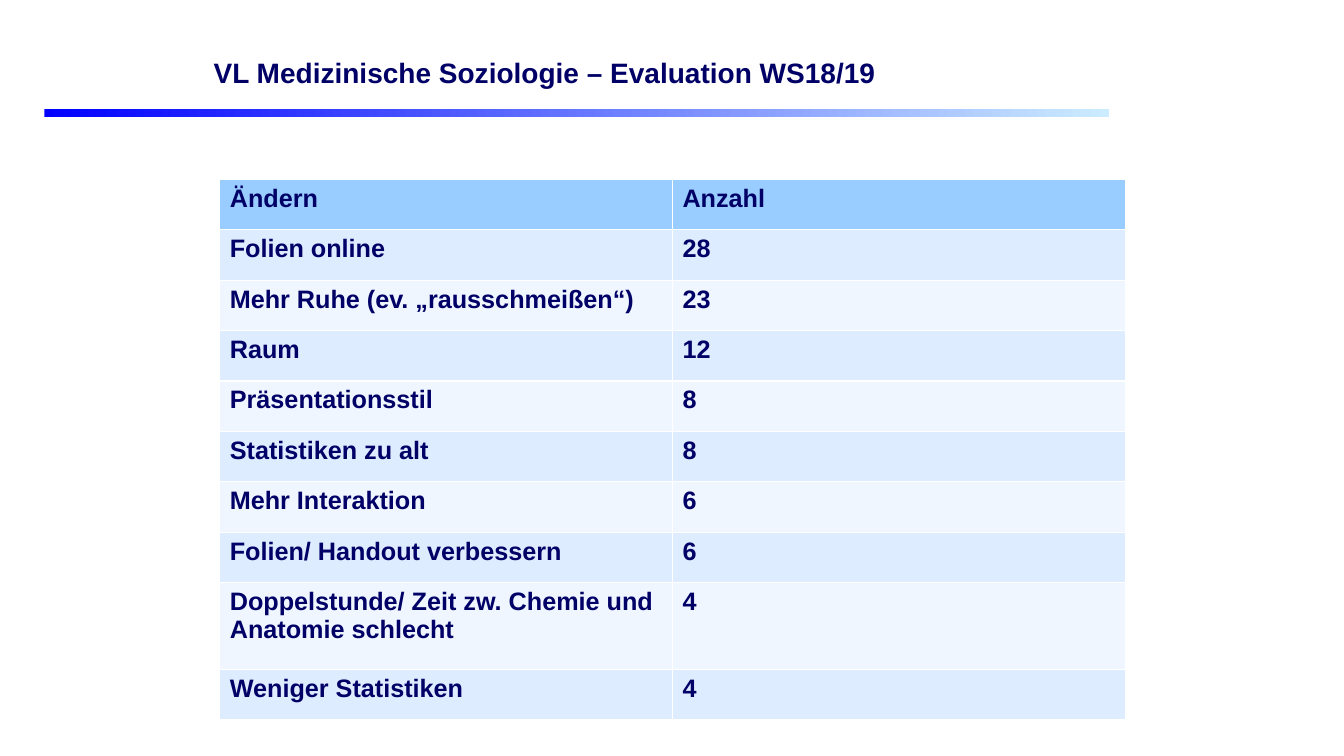
from pptx import Presentation
from pptx.dml.color import RGBColor
from pptx.enum import shapes, text
from pptx.util import Inches, Pt

# Content
TITLE = "VL Medizinische Soziologie – Evaluation WS18/19"
ROWS = [
    ("Ändern", "Anzahl"),
    ("Folien online", "28"),
    ("Mehr Ruhe (ev. „rausschmeißen“)", "23"),
    ("Raum", "12"),
    ("Präsentationsstil", "8"),
    ("Statistiken zu alt", "8"),
    ("Mehr Interaktion", "6"),
    ("Folien/ Handout verbessern", "6"),
    ("Doppelstunde/ Zeit zw. Chemie und Anatomie schlecht", "4"),
    ("Weniger Statistiken", "4"),
]
TWO_LINE_ROW = 8
ROW_HEIGHT, TALL_HEIGHT = 0.5, 0.86
NAVY, HEADER, BANDS = "000066", "99CCFF", ("EFF6FF", "DEECFF")


def color(value):
    return RGBColor.from_string(value)


def write(tf, words, size):
    p = tf.paragraphs[0]
    p.text = words
    p.alignment = text.PP_ALIGN.LEFT
    p.font.name, p.font.size, p.font.bold = "Arial", Pt(size), True
    p.font.color.rgb = color(NAVY)


def add_box(s, left, top, width, height):
    sp = s.shapes.add_shape(shapes.MSO_SHAPE.RECTANGLE, Inches(left),
                            Inches(top), Inches(width), Inches(height))
    sp.shadow.inherit = False
    sp.line.fill.background()
    return sp


prs = Presentation()
prs.slide_width, prs.slide_height = Inches(13.33), Inches(7.5)
s = prs.slides.add_slide(prs.slide_layouts[6])

# Gradient rule under the title
rule = add_box(s, 0.44, 1.08, 10.56, 0.08)
rule.fill.gradient()
rule.fill.gradient_angle = 0
for stop, shade in zip(rule.fill.gradient_stops, ("0000FF", "CCECFF")):
    stop.color.rgb = color(shade)

# Table; its default style draws the white borders
heights = [TALL_HEIGHT if i == TWO_LINE_ROW else ROW_HEIGHT
           for i in range(len(ROWS))]
table = s.shapes.add_table(len(ROWS), 2, Inches(2.18), Inches(1.78),
                           Inches(8.98), Inches(sum(heights))).table
for i, (row, height) in enumerate(zip(ROWS, heights)):
    table.rows[i].height = Inches(height)
    for j, words in enumerate(row):
        cell = table.cell(i, j)
        cell.fill.solid()
        cell.fill.fore_color.rgb = color(BANDS[i % 2] if i else HEADER)
        write(cell.text_frame, words, 18)

# Title
title = add_box(s, 2.02, 0.36, 7.32, 0.71)
title.fill.solid()
title.fill.fore_color.rgb = color("FFFFFF")
title.text_frame.word_wrap = True
title.text_frame.vertical_anchor = text.MSO_ANCHOR.MIDDLE
write(title.text_frame, TITLE, 20)

prs.save("out.pptx")
